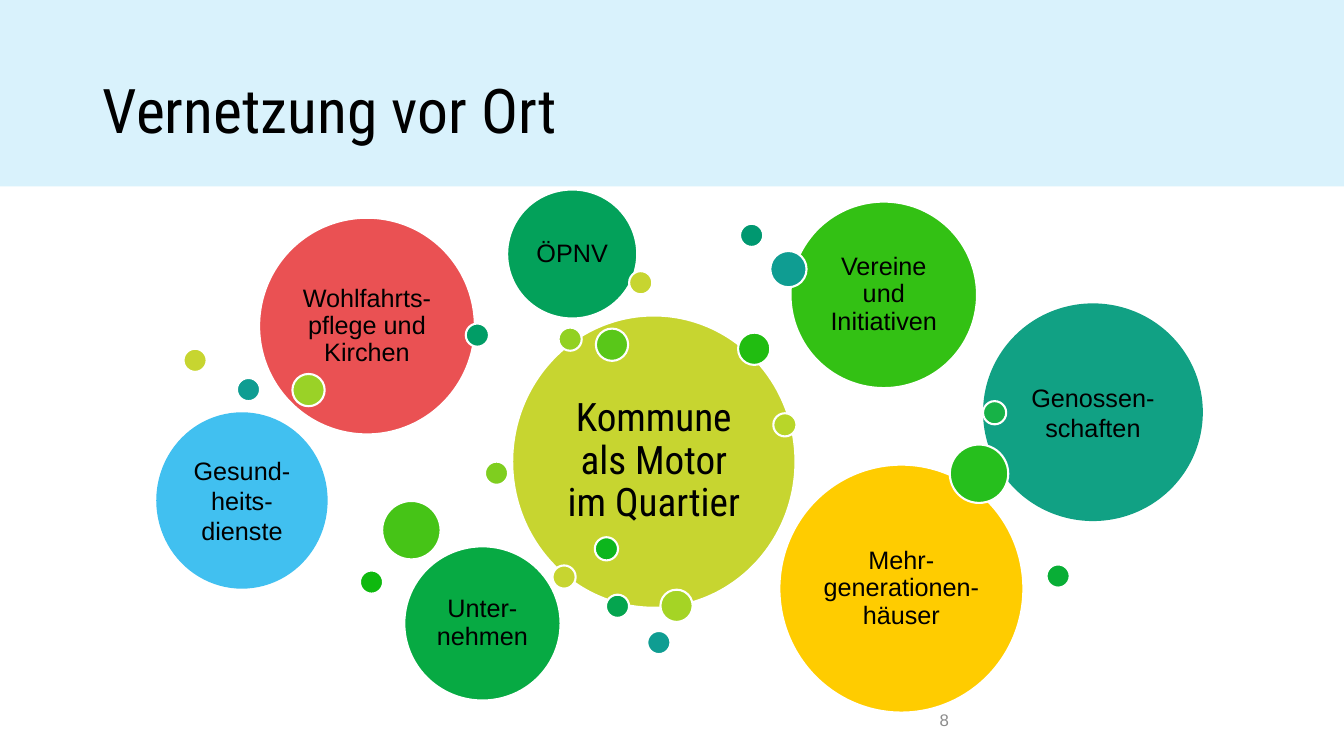
from pptx import Presentation
from pptx.dml.color import RGBColor
from pptx.enum.shapes import MSO_SHAPE
from pptx.enum.text import MSO_ANCHOR, PP_ALIGN
from pptx.util import Inches, Pt

SMALL, MEDIUM, LARGE = 0.23, 0.32, 0.58


def color(value):
    return RGBColor.from_string(value)


class NetworkSlide:
    heading_font = "Roboto Condensed"
    body_font = "Arial"
    black = "000000"
    white = "FFFFFF"

    def __init__(self, prs):
        self.s = prs.slides.add_slide(prs.slide_layouts[5])

    def place(self, sp, left, top, width, height):
        sp.left, sp.top = Inches(left), Inches(top)
        sp.width, sp.height = Inches(width), Inches(height)

    def set_text(self, sp, text, size, font, align, ink=black, spacing=1.0, inset=None):
        tf = sp.text_frame
        tf.word_wrap = True
        tf.vertical_anchor = MSO_ANCHOR.MIDDLE
        if inset is not None:
            tf.margin_left = tf.margin_right = Inches(inset)
            tf.margin_top = tf.margin_bottom = Inches(inset)
        p = tf.paragraphs[0]
        p.alignment = align
        p.line_spacing = spacing
        r = p.add_run()
        r.text = text
        r.font.size = Pt(size)
        r.font.name = font
        r.font.color.rgb = color(ink)

    def shape(self, kind, left, top, width, height, fill, outlined=True):
        sp = self.s.shapes.add_shape(
            kind, Inches(left), Inches(top), Inches(width), Inches(height))
        sp.shadow.inherit = False
        sp.fill.solid()
        sp.fill.fore_color.rgb = color(fill)
        if outlined:
            sp.line.color.rgb = color(self.white)
            sp.line.width = Pt(1.5)
        else:
            sp.line.fill.background()
        return sp

    def title(self, text):
        sp = self.s.shapes.title
        self.place(sp, 0.92, 0.4, 11.5, 1.45)
        self.set_text(sp, text, 44, self.heading_font, PP_ALIGN.LEFT, spacing=0.9)

    def band(self, width, height, fill):
        sp = self.shape(MSO_SHAPE.RECTANGLE, 0, 0, width, height, fill, False)
        self.s.shapes.title.element.addprevious(sp.element)

    def dot(self, left, top, size, fill):
        self.shape(MSO_SHAPE.OVAL, left, top, size, size, fill)

    def bubble(self, left, top, width, height, fill, text, size=18,
               font=body_font, spacing=0.9, inset=0.07, outlined=True):
        sp = self.shape(MSO_SHAPE.OVAL, left, top, width, height, fill, outlined)
        self.set_text(sp, text, size, font, PP_ALIGN.CENTER, spacing=spacing, inset=inset)

    def plain_bubble(self, left, top, width, height, fill, text):
        self.bubble(left, top, width, height, fill, text,
                    spacing=1.0, inset=None, outlined=False)

    def dots(self, rows):
        for row in rows:
            self.dot(*row)

    def page_number(self, text):
        sp = self.s.shapes.add_textbox(
            Inches(8.92), Inches(6.95), Inches(0.59), Inches(0.39))
        self.set_text(sp, text, 12, self.body_font, PP_ALIGN.RIGHT, "8C8C8C")


def main():
    prs = Presentation()
    prs.slide_width, prs.slide_height = Inches(13.33), Inches(7.5)
    net = NetworkSlide(prs)
    net.title("Vernetzung vor Ort")
    net.band(13.33, 1.85, "D9F2FC")

    net.bubble(5.08, 3.13, 2.81, 2.9, "C7D530", "Kommune als Motor im Quartier",
               size=28, font=net.heading_font, inset=0.12)
    net.dots([
        (5.48, 5.61, SMALL, "C7D530"),
        (7.67, 4.1, SMALL, "B8D629"),
        (6.55, 5.85, MEDIUM, "A5D425"),
        (5.54, 3.25, SMALL, "92D122"),
        (4.81, 4.58, SMALL, "7FCE1F"),
    ])
    net.bubble(2.57, 2.16, 2.14, 2.15, "EA5153", "Wohlfahrts-pflege und Kirchen")
    net.dots([
        (5.91, 3.26, MEDIUM, "59C719"),
        (3.79, 4.97, LARGE, "46C417"),
    ])
    net.bubble(7.84, 2, 1.85, 1.85, "33C114", "Vereine und Initiativen")
    net.dots([
        (7.32, 3.3, MEDIUM, "21BD11"),
        (3.57, 5.66, SMALL, "0FB90F"),
        (5.9, 5.33, SMALL, "0DB61D"),
    ])
    net.bubble(7.73, 4.61, 2.42, 2.46, "FFCC00", "Mehr-generationen-häuser")
    net.dot(10.38, 5.6, SMALL, "09AE36")
    net.bubble(4.01, 5.42, 1.55, 1.53, "07AA43", "Unter-nehmen")
    net.dot(6.01, 5.9, SMALL, "05A54F")
    net.bubble(5.03, 1.88, 1.29, 1.28, "03A15A", "ÖPNV")
    net.dots([
        (4.62, 3.21, SMALL, "019D66"),
        (7.34, 2.22, SMALL, "009870"),
    ])
    net.page_number("8")

    net.plain_bubble(1.55, 4.09, 1.7, 1.75, "41C0F0", "Gesund-heits-dienste")
    net.plain_bubble(9.75, 3.01, 2.18, 2.16, "11A184", "Genossen-schaften")
    net.dots([
        (9.42, 4.41, LARGE, "26BF1D"),
        (9.75, 3.98, SMALL, "17B247"),
        (1.82, 3.46, SMALL, "C7D530"),
        (2.9, 3.71, MEDIUM, "9AD227"),
        (2.35, 3.75, SMALL, "0F9D92"),
        (6.42, 6.26, SMALL, "0F9D92"),
        (7.64, 2.49, 0.36, "0F9D92"),
        (6.24, 2.69, SMALL, "C7D530"),
    ])
    prs.save("out.pptx")


if __name__ == "__main__":
    main()
